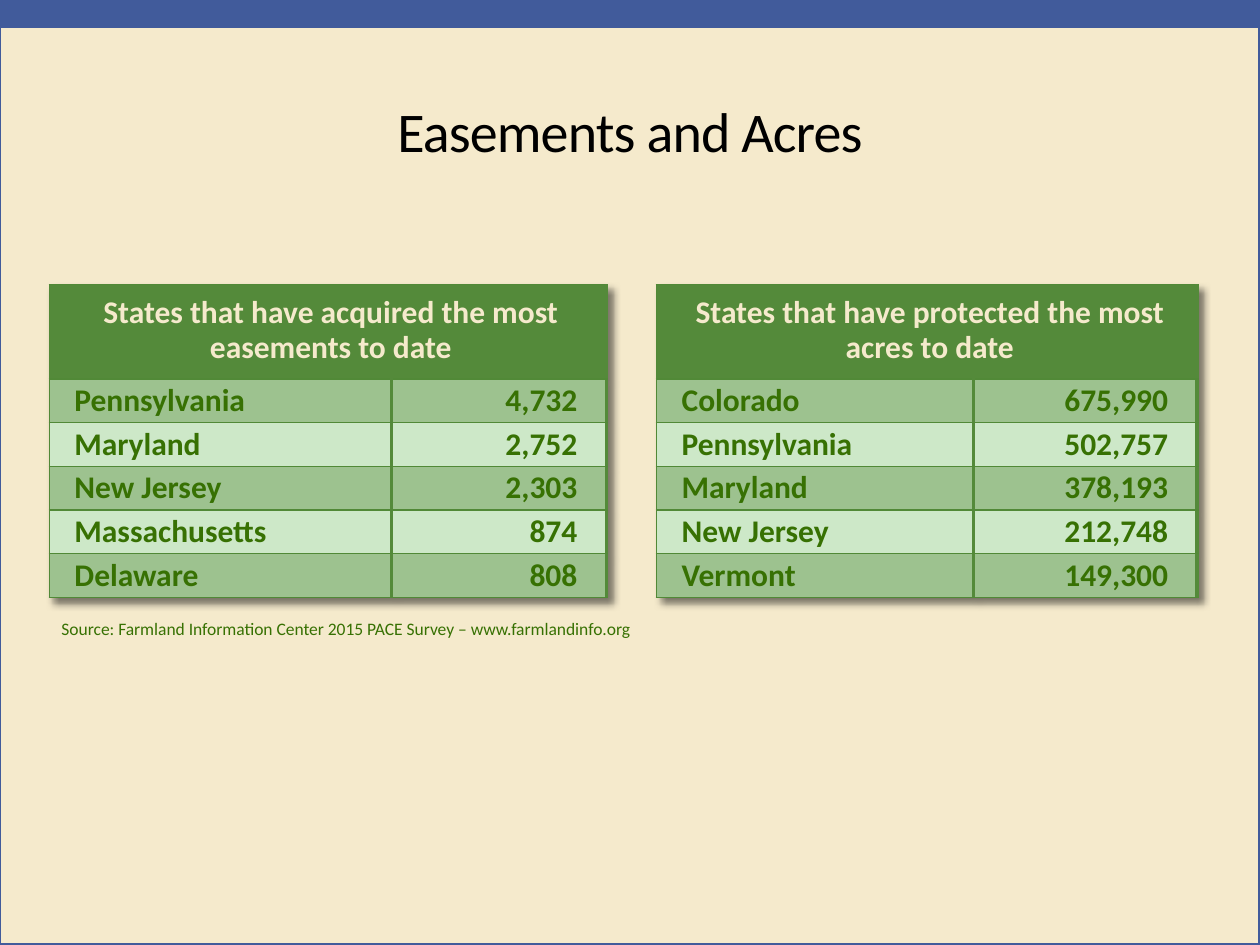
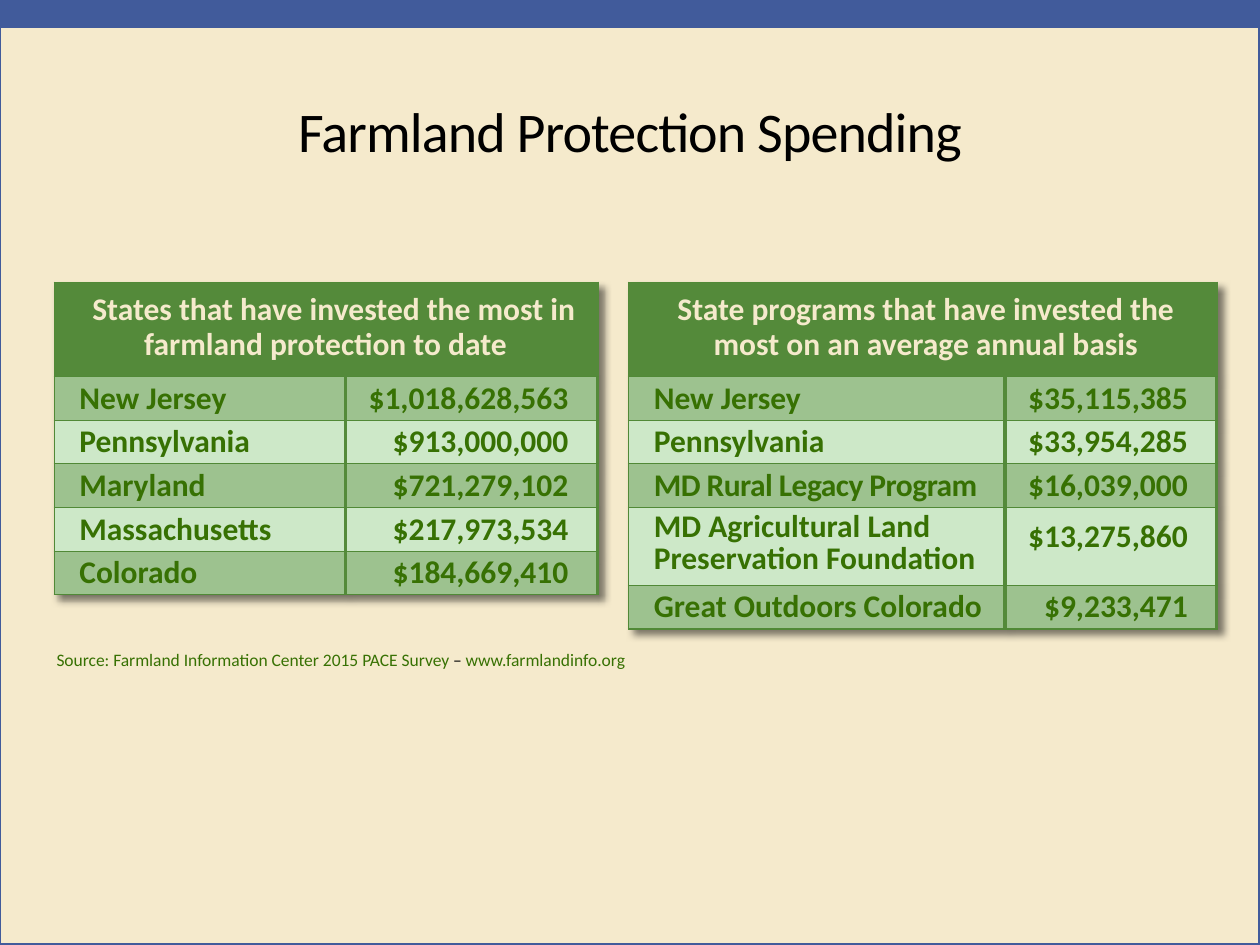
from dataclasses import dataclass

from lxml import etree
from pptx import Presentation
from pptx import util as u
from pptx.dml.color import RGBColor
from pptx.enum import shapes, text
from pptx.oxml import ns

COLORS = {
    "cream": "F5EACC",
    "blue": "415B9B",
    "black": "000000",
    "header": "548A3A",
    "border": "518937",
    "dark_row": "9DC28F",
    "light_row": "CDE8C8",
    "green_text": "377103",
}
FONT = "Calibri"
HEADER_HEIGHT, ROW_HEIGHT = 1.9, 0.88
THIN, THICK = u.Pt(0.75), u.Pt(2)
ALIGN = text.PP_ALIGN


@dataclass(frozen=True)
class Row:
    name: str
    value: str
    height: float = ROW_HEIGHT
    name_leading: float | None = None
    value_leading: float | None = None
    name_spacing: float = 0


@dataclass(frozen=True)
class Ranking:
    """A two-column table; lengths in centimetres."""
    heading: str
    left: float
    top: float
    widths: tuple[float, float]
    rows: tuple[Row, ...]
    heading_margin: float = 0.13
    first_line_indent: float = 0


@dataclass(frozen=True)
class Page:
    title: str
    rankings: tuple[Ranking, ...]
    source: tuple[tuple[str, str], ...]
    source_left: float
    source_top: float


PAGES = (
    Page(
        "Easements and Acres",
        (
            Ranking("States that have protected the most acres to date",
                    13.23, 5.74, (6.4, 4.5),
                    (Row("Colorado", "675,990"),
                     Row("Pennsylvania", "502,757"),
                     Row("Maryland", "378,193"),
                     Row("New Jersey", "212,748"),
                     Row("Vermont", "149,300"))),
            Ranking("States that have acquired the most easements to date",
                    0.99, 5.74, (6.91, 4.32),
                    (Row("Pennsylvania", "4,732"),
                     Row("Maryland", "2,752"),
                     Row("New Jersey", "2,303"),
                     Row("Massachusetts", "874"),
                     Row("Delaware", "808"))),
        ),
        (("Source: Farmland Information Center 2015 PACE Survey – www.farmlandinfo.org",
          "green_text"),),
        0.99, 12.34,
    ),
    Page(
        "Farmland Protection Spending",
        (
            Ranking("States that have invested the most in farmland protection to date",
                    1.09, 5.69, (5.87, 5.08),
                    (Row("New Jersey", "$1,018,628,563"),
                     Row("Pennsylvania", "$913,000,000"),
                     Row("Maryland", "$721,279,102"),
                     Row("Massachusetts", "$217,973,534"),
                     Row("Colorado", "$184,669,410")),
                    heading_margin=0, first_line_indent=0.33),
            Ranking("State programs that have invested the most on an average annual basis",
                    12.67, 5.69, (7.59, 4.27),
                    (Row("New Jersey", "$35,115,385"),
                     Row("Pennsylvania", "$33,954,285"),
                     Row("MD Rural Legacy Program", "$16,039,000", name_spacing=-0.3),
                     Row("MD Agricultural Land Preservation Foundation", "$13,275,860",
                         height=1.57, name_leading=18, value_leading=11),
                     Row("Great Outdoors Colorado", "$9,233,471"))),
        ),
        (("Source: Farmland Information Center 2015 PACE Survey ", "green_text"),
         ("– ", "black"),
         ("www.farmlandinfo.org", "green_text")),
        0.89, 12.95,
    ),
)


def rgb(name: str) -> RGBColor:
    return RGBColor.from_string(COLORS[name])


def write(para, words: str, *, size: float = 18, color: str = "green_text",
          bold: bool = False, spacing: float = 0, align=None,
          leading: float | None = None) -> None:
    """Append a formatted span; spacing and leading are in points."""
    span = para.add_run()
    span.text = words
    span.font.name = FONT
    span.font.size = u.Pt(size)
    span.font.bold = bold
    span.font.color.rgb = rgb(color)
    if spacing:
        span.font._element.set("spc", str(round(spacing * 100)))
    if align is not None:
        para.alignment = align
    if leading:
        para.line_spacing = u.Pt(leading)


def add_box(slide, left: float, top: float, width: float, height: float):
    box = slide.shapes.add_textbox(u.Cm(left), u.Cm(top), u.Cm(width), u.Cm(height))
    box.text_frame.word_wrap = True
    return box.text_frame


def add_frame_part(slide, top: float, height: float, filled: bool) -> None:
    part = slide.shapes.add_shape(shapes.MSO_SHAPE.RECTANGLE, u.Cm(-0.02), u.Cm(top),
                                  u.Cm(25.42), u.Cm(height))
    part.shadow.inherit = False
    part.line.color.rgb = rgb("blue")
    part.line.width = THICK
    if filled:
        part.fill.solid()
        part.fill.fore_color.rgb = rgb("blue")
    else:
        part.fill.background()


def add_background(slide) -> None:
    slide.background.fill.solid()
    slide.background.fill.fore_color.rgb = rgb("cream")
    add_frame_part(slide, 0, 0.5, filled=True)
    add_frame_part(slide, 0.53, 18.52, filled=False)


def add_title(slide, title: str) -> None:
    frame = add_box(slide, 1.27, 1.32, 22.86, 2.62)
    frame.margin_left = frame.margin_right = frame.margin_top = frame.margin_bottom = 0
    frame.vertical_anchor = text.MSO_ANCHOR.MIDDLE
    write(frame.paragraphs[0], title, size=32, color="black", spacing=-0.5,
          align=ALIGN.CENTER)


def add_element(parent, tag: str, **attributes):
    return etree.SubElement(parent, ns.qn(tag),
                            {key: str(value) for key, value in attributes.items()})


def style_cell(cell, column: int, fill: str, margin_left: float, margin_right: float) -> None:
    """Set borders, fill and margins; the column divider and right edge are thick."""
    properties = cell._tc.get_or_add_tcPr()
    edges = {"a:lnL": THICK if column else THIN, "a:lnR": THICK,
             "a:lnT": THIN, "a:lnB": THIN}
    for tag, width in edges.items():
        line = add_element(properties, tag, w=int(width))
        color = "header" if width == THICK else "border"
        add_element(add_element(line, "a:solidFill"), "a:srgbClr", val=COLORS[color])
    cell.fill.solid()
    cell.fill.fore_color.rgb = rgb(fill)
    cell.margin_left, cell.margin_right = u.Cm(margin_left), u.Cm(margin_right)
    cell.margin_top = cell.margin_bottom = 0
    cell.vertical_anchor = text.MSO_ANCHOR.MIDDLE


def add_table_shadow(table) -> None:
    properties = table._tbl.tblPr
    effects = add_element(properties, "a:effectLst")
    shadow = add_element(effects, "a:outerShdw", blurRad=int(u.Pt(4)),
                         dist=int(u.Pt(4)), dir=2700000, algn="tl", rotWithShape=0)
    color = add_element(shadow, "a:srgbClr", val=COLORS["black"])
    add_element(color, "a:alpha", val=50000)
    properties.insert(0, effects)


def add_ranking(slide, ranking: Ranking) -> None:
    heights = [HEADER_HEIGHT, *(row.height for row in ranking.rows)]
    table = slide.shapes.add_table(
        len(heights), 2, u.Cm(ranking.left), u.Cm(ranking.top),
        u.Cm(sum(ranking.widths)), u.Cm(sum(heights))).table
    table.first_row = table.horz_banding = False
    add_table_shadow(table)
    for column, width in zip(table.columns, ranking.widths):
        column.width = u.Cm(width)
    for table_row, height in zip(table.rows, heights):
        table_row.height = u.Cm(height)

    heading = table.cell(0, 0)
    heading.merge(table.cell(0, 1))
    for column in range(2):
        style_cell(table.cell(0, column), column, "header", 0.18, 0.18)
    para = heading.text_frame.paragraphs[0]
    indents = para._p.get_or_add_pPr()
    indents.set("marL", str(int(u.Cm(ranking.heading_margin))))
    indents.set("indent", str(int(u.Cm(ranking.first_line_indent))))
    write(para, ranking.heading, color="cream", bold=True, align=ALIGN.CENTER, leading=20)

    for index, row in enumerate(ranking.rows, start=1):
        fill = "dark_row" if index % 2 else "light_row"
        name, value = table.cell(index, 0), table.cell(index, 1)
        style_cell(name, 0, fill, 0.51, 0.18)
        style_cell(value, 1, fill, 0.18, 0.58)
        write(name.text_frame.paragraphs[0], row.name, bold=True,
              spacing=row.name_spacing, leading=row.name_leading)
        write(value.text_frame.paragraphs[0], row.value, bold=True,
              align=ALIGN.RIGHT, leading=row.value_leading)


def add_page(deck, page: Page) -> None:
    slide = deck.slides.add_slide(deck.slide_layouts[6])
    add_background(slide)
    add_title(slide, page.title)
    for ranking in page.rankings:
        add_ranking(slide, ranking)
    source = add_box(slide, page.source_left, page.source_top, 16.59, 0.69)
    for words, color in page.source:
        write(source.paragraphs[0], words, size=10, color=color)


def main() -> None:
    deck = Presentation()
    deck.slide_width, deck.slide_height = u.Cm(25.4), u.Cm(19.05)
    for page in PAGES:
        add_page(deck, page)
    deck.save("out.pptx")


if __name__ == "__main__":
    main()
